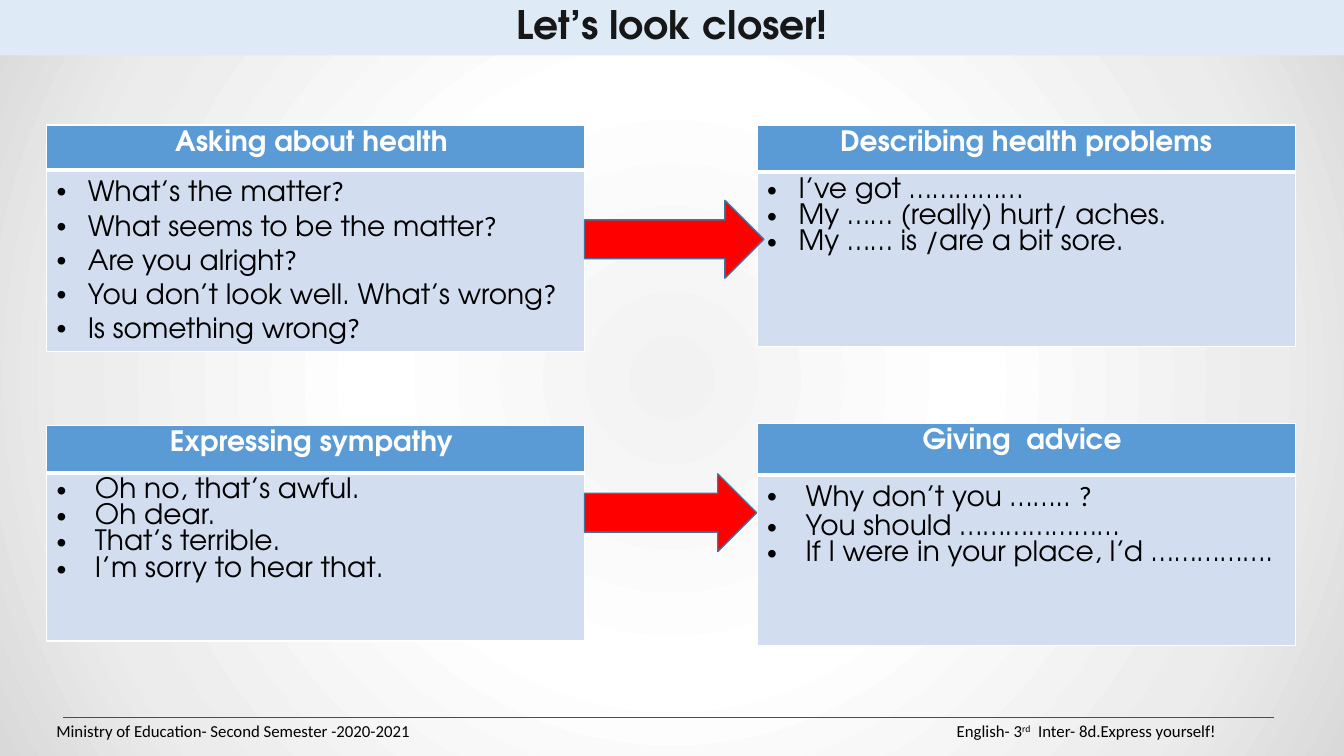
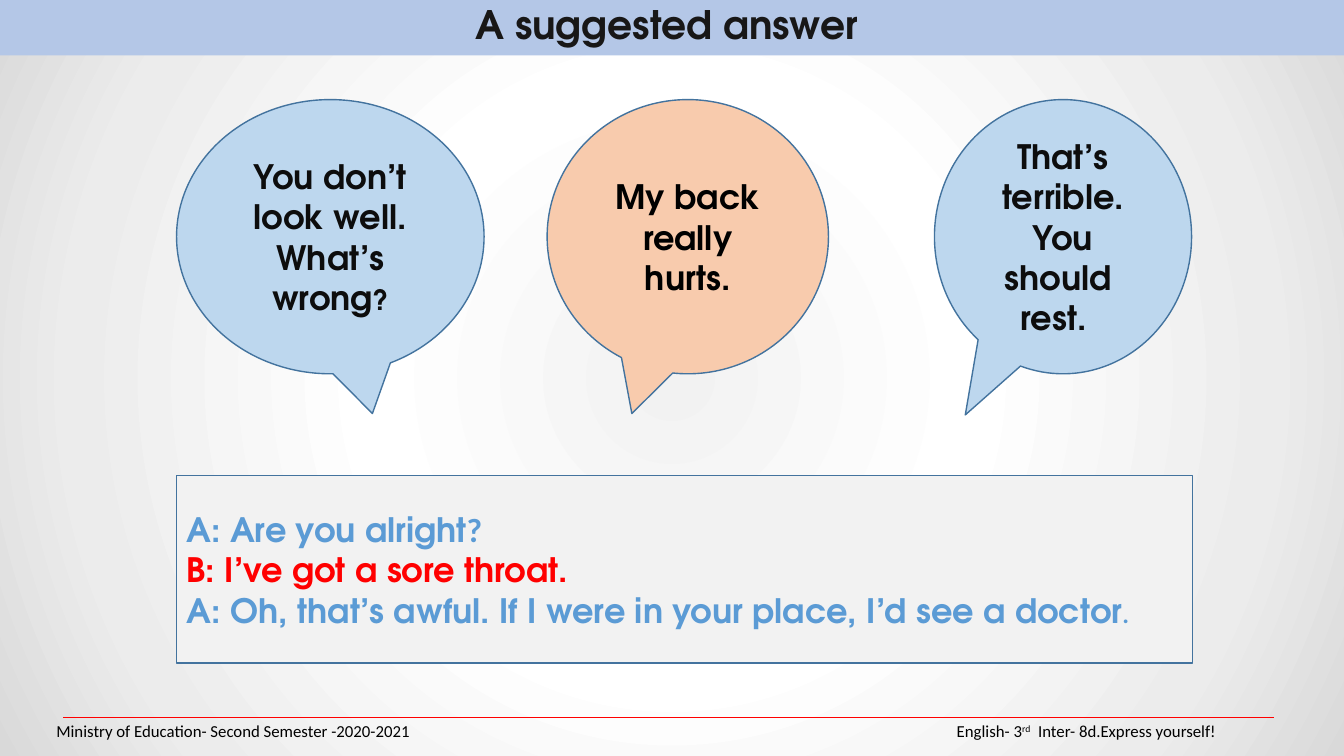
from lxml import etree
from pptx import Presentation
from pptx.dml.color import RGBColor
from pptx.enum.shapes import MSO_CONNECTOR, MSO_SHAPE
from pptx.enum.text import MSO_ANCHOR, PP_ALIGN
from pptx.oxml import parse_xml
from pptx.oxml.ns import nsdecls, qn
from pptx.util import Cm, Pt

# Shared style
WIDE, HIGH = 33.87, 19.05
MAIN, PLAIN = "TeX Gyre Adventor", "Calibri"
BLUE, PALE, SKY, PEACH = "5B9BD5", "D2DEEF", "BDD7EE", "F8CBAD"
RED, EDGE, WHITE, BLACK, INK = "FF0000", "43739E", "FFFFFF", "000000", "0D0D0D"
STOPS = [(0, "F2F2F2"), (39, "FFFFFF"), (78, "ECECEC"), (100, "D9D9D9")]
TITLE = dict(size=28, bold=True, color="181717")
HEAD = dict(size=20, bold=True, color=WHITE)
BODY = dict(size=20, color=BLACK)
TALK = dict(size=24, bold=True)
NOTE = dict(size=12, name=PLAIN, color=BLACK)
MARK = dict(name=PLAIN)
TIGHT, LOOSE = 18.7, 24.4

# Content: footer
FOOT = [
    (1.17, [("Ministry of Education- Second Semester -2020-2021", {})]),
    (23.86, [("English- 3", {}), ("rd", dict(base=30000)),
             ("  Inter- 8d.Express yourself!", {})]),
]

# Content: phrase tables (left, top, row heights, indent, heading, phrases)
LEFT, RIGHT, SPAN = 1.17, 19.08, 13.56
CARDS = [
    (LEFT, 3.15, (1.14, 4.5), 0.79, "Asking about health ", [
        "What’s the matter?", "What seems to be the matter?",
        "Are you alright?", "You don’t look well. What’s wrong?",
        "Is something wrong?"]),
    (RIGHT, 3.15, (1.19, 4.39), 0.79, "Describing health problems", [
        "I’ve got ……………", "My …… (really) hurt/ aches.",
        "My …… is /are a bit sore."]),
    (LEFT, 10.72, (1.19, 4.24), 0.97, "Expressing sympathy ", [
        "Oh no, that’s awful.", "Oh dear.", "That’s terrible.",
        "I’m sorry to hear that."]),
    (RIGHT, 10.67, (1.3, 4.29), 0.97, "Giving  advice ", [
        "Why don’t you …….. ?", "You should …………………",
        "If I were in your place, I’d ……………."]),
]
ARROWS = [(5.05, 4.52), (11.94, 4.34)]  # top, width

# Content: speech bubbles (left, width, tail, fill, ink, paragraphs)
BUBBLES = [
    (4.45, 7.75, (0.137, 0.645), SKY, INK,
     [[("You don’t look well. What’s wrong", {}), ("?", dict(size=20))]]),
    (13.79, 7.09, (-0.199, 0.645), PEACH, BLACK,
     [[("My back really hurts.", {})]]),
    (23.55, 6.48, (-0.38, 0.65), SKY, INK,
     [[("That’s terrible.", {})], [("You should ", {})], [("rest.  ", {})]]),
]
DIALOG = [
    [("A: Are you alright", {}), ("?", MARK)],
    [("B: I’ve got a sore throat.", dict(color=RED))],
    [("A: Oh, that’s awful. If I were in your place, I’d see a doctor", {}),
     (".", dict(name=PLAIN, size=18))],
]


def rgb(code):
    return RGBColor.from_string(code)


def style(run, form):
    for key, val in form.items():
        if key == "color":
            run.font.color.rgb = rgb(val)
        elif key == "base":
            run.font._element.set("baseline", str(val))
        else:
            setattr(run.font, key, Pt(val) if key == "size" else val)


def write(frame, paras, form, align=PP_ALIGN.LEFT, pitch=None):
    """Fill a text frame with paragraphs, each a list of (text, format)."""
    frame.word_wrap = True
    for i, runs in enumerate(paras):
        para = frame.paragraphs[0] if i == 0 else frame.add_paragraph()
        para.alignment = align
        if pitch:
            para.line_spacing = Pt(pitch)
        for text, extra in runs:
            run = para.add_run()
            run.text = text
            style(run, {"name": MAIN, **form, **extra})


def shape(slide, kind, box, fill, line=None):
    item = slide.shapes.add_shape(kind, *map(Cm, box))
    item.shadow.inherit = False
    item.fill.solid()
    item.fill.fore_color.rgb = rgb(fill)
    if line:
        item.line.color.rgb = rgb(line)
        item.line.width = Pt(1)
    else:
        item.line.fill.background()
    return item


def backdrop(master):
    """Radial grey gradient behind every slide."""
    master.background.fill.gradient()
    old = next(master._element.iter(qn("a:gradFill")))
    stops = "".join(f'<a:gs pos="{pos * 1000}"><a:srgbClr val="{code}"/></a:gs>'
                    for pos, code in STOPS)
    new = parse_xml(
        f'<a:gradFill {nsdecls("a")} rotWithShape="1"><a:gsLst>{stops}</a:gsLst>'
        '<a:path path="circle"><a:fillToRect l="50000" t="50000" r="50000" '
        'b="50000"/></a:path></a:gradFill>')
    old.getparent().replace(old, new)


def page(deck, title, fill):
    """Add a slide with its title band and footer."""
    slide = deck.slides.add_slide(deck.slide_layouts[6])
    band = shape(slide, MSO_SHAPE.RECTANGLE, (0, 0, WIDE, 1.4), fill)
    band.text_frame.vertical_anchor = MSO_ANCHOR.TOP
    write(band.text_frame, [[(title, TITLE)]], {}, PP_ALIGN.CENTER, 30)
    rule = slide.shapes.add_connector(
        MSO_CONNECTOR.STRAIGHT, Cm(1.59), Cm(18.07), Cm(32.1), Cm(18.07))
    rule.line.color.rgb = rgb(RED)
    rule.line.width = Pt(0.6)
    etree.SubElement(rule._element.spPr, qn("a:effectLst"))
    for left, runs in FOOT:
        box = slide.shapes.add_textbox(Cm(left), Cm(17.92), Cm(9.5), Cm(1))
        box.text_frame.vertical_anchor = MSO_ANCHOR.MIDDLE
        write(box.text_frame, [runs], NOTE)
    return slide


def border(cell, **widths):
    props = cell._tc.get_or_add_tcPr()
    for i, side in enumerate("LRTB"):
        size = widths.get(side, 1) * 12700
        props.insert(i, parse_xml(
            f'<a:ln{side} {nsdecls("a")} w="{size}"><a:solidFill>'
            f'<a:srgbClr val="{WHITE}"/></a:solidFill></a:ln{side}>'))


def bullet(para, indent):
    props = para._p.get_or_add_pPr()
    props.set("marL", str(Cm(indent)))
    props.set("indent", str(-Cm(indent)))
    for tag, key, val in (("a:buFont", "typeface", "Arial"),
                          ("a:buChar", "char", "•")):
        etree.SubElement(props, qn(tag)).set(key, val)


def split(text):
    """Set a closing question mark in the plain font."""
    if text.endswith("?"):
        return [(text[:-1], {}), ("?", MARK)]
    return [(text, {})]


def card(slide, left, top, rows, indent, head, lines):
    grid = slide.shapes.add_table(
        2, 1, Cm(left), Cm(top), Cm(SPAN), Cm(sum(rows))).table
    for row, size in zip(grid.rows, rows):
        row.height = Cm(size)
    first, body = grid.cell(0, 0), grid.cell(1, 0)
    for cell, fill in ((first, BLUE), (body, PALE)):
        cell.fill.solid()
        cell.fill.fore_color.rgb = rgb(fill)
    border(first, B=3)
    border(body, T=3)
    write(first.text_frame, [[(head, {})]], HEAD, PP_ALIGN.CENTER, TIGHT)
    write(body.text_frame, [split(line) for line in lines], BODY)
    for para, line in zip(body.text_frame.paragraphs, lines):
        para.line_spacing = Pt(LOOSE if line.endswith("?") else TIGHT)
        bullet(para, indent)


def main():
    deck = Presentation()
    deck.slide_width, deck.slide_height = Cm(WIDE), Cm(HIGH)
    backdrop(deck.slide_master)

    # Phrase tables joined by arrows
    slide = page(deck, "Let’s look closer!", "DEEBF7")
    for item in CARDS:
        card(slide, *item)
    for top, wide in ARROWS:
        shape(slide, MSO_SHAPE.RIGHT_ARROW,
              (LEFT + SPAN, top, wide, 1.96), RED, EDGE)

    # Speech bubbles above a dialogue
    slide = page(deck, "A suggested answer ", "B4C7E7")
    for left, wide, tail, fill, ink, paras in BUBBLES:
        item = shape(slide, MSO_SHAPE.OVAL_CALLOUT,
                     (left, 2.51, wide, 6.91), fill, EDGE)
        for i, val in enumerate(tail):
            item.adjustments[i] = val
        item.text_frame.vertical_anchor = MSO_ANCHOR.MIDDLE
        write(item.text_frame, paras, {**TALK, "color": ink},
              PP_ALIGN.CENTER, 28.8)
    item = shape(slide, MSO_SHAPE.RECTANGLE,
                 (4.45, 11.99, 25.6, 4.72), "F2F2F2", EDGE)
    item.text_frame.vertical_anchor = MSO_ANCHOR.MIDDLE
    write(item.text_frame, DIALOG, {**TALK, "color": BLUE}, pitch=28.8)

    deck.save("out.pptx")


if __name__ == "__main__":
    main()
